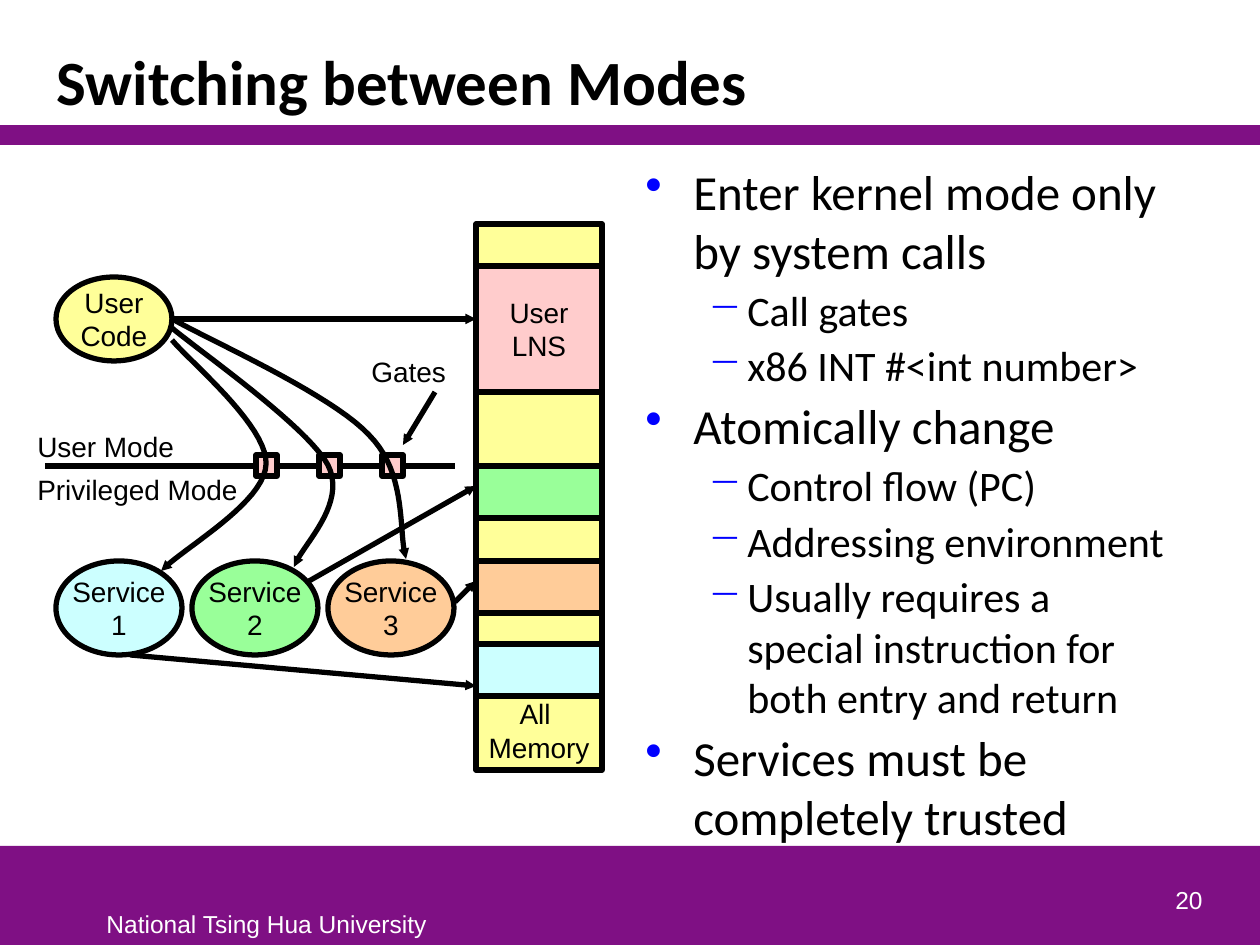
import pptx
import pptx.util
import pptx.dml.color
import pptx.enum.shapes
import pptx.enum.text
import pptx.oxml
import pptx.oxml.ns

PX = 914400 / 126
COLORS = {
    "purple": "7F1084", "white": "FFFFFF", "black": "000000", "bullet": "0000FF",
    "yellow": "FFFF99", "pink": "FFCCCC", "cyan": "CCFFFF", "green": "99FF99", "orange": "FFCC99",
}
RGB = {name: pptx.dml.color.RGBColor.from_string(code) for name, code in COLORS.items()}
KIND = pptx.enum.shapes.MSO_SHAPE
ANCHOR = pptx.enum.text.MSO_ANCHOR
ALIGN = pptx.enum.text.PP_ALIGN
STRAIGHT = pptx.enum.shapes.MSO_CONNECTOR.STRAIGHT


def write(frame, lines, size=16, font="Arial", color="black", bold=False,
          align=ALIGN.LEFT, anchor=ANCHOR.TOP, wrap=False):
    frame.word_wrap = wrap
    frame.vertical_anchor = anchor
    for index, line in enumerate(lines):
        paragraph = frame.paragraphs[0] if index == 0 else frame.add_paragraph()
        paragraph.alignment = align
        run = paragraph.add_run()
        run.text = line
        run.font.size = pptx.util.Pt(size)
        run.font.name = font
        run.font.bold = bold
        run.font.color.rgb = RGB[color]


def stroke(shape, arrow=False):
    shape.line.color.rgb = RGB["black"]
    shape.line.width = pptx.util.Pt(3)
    properties = shape._element.spPr
    if arrow:
        outline = properties.find(pptx.oxml.ns.qn("a:ln"))
        outline.append(pptx.oxml.parse_xml(
            f'<a:tailEnd {pptx.oxml.ns.nsdecls("a")} type="triangle" w="sm" len="sm"/>'))
    properties.append(pptx.oxml.parse_xml(f'<a:effectLst {pptx.oxml.ns.nsdecls("a")}/>'))


deck = pptx.Presentation()
deck.slide_width = round(1260 * PX)
deck.slide_height = round(945 * PX)
slide = deck.slides.add_slide(deck.slide_layouts[5])
shapes = slide.shapes

for top, height in [(846, 99), (125, 20)]:
    band = shapes.add_shape(KIND.RECTANGLE, 0, round(top * PX), deck.slide_width, round(height * PX))
    band.shadow.inherit = False
    band.fill.solid()
    band.fill.fore_color.rgb = RGB["purple"]
    band.line.fill.background()

title = shapes.title
title.left, title.top, title.width, title.height = [round(v * PX) for v in (44, 31, 1171, 94)]
write(title.text_frame, ["Switching between Modes"], size=36, font="Calibri", bold=True,
      anchor=ANCHOR.BOTTOM, wrap=True)
title.text_frame.paragraphs[0].line_spacing = 0.85

points = [
    (0, "Enter kernel mode only by system calls"),
    (1, "Call gates"),
    (1, "x86 INT #<int number>"),
    (0, "Atomically change"),
    (1, "Control flow (PC)"),
    (1, "Addressing environment"),
    (1, "Usually requires a special instruction for both entry and return"),
    (0, "Services must be completely trusted"),
]
levels = [(28, "•", 48, 48), (24, "−", 102, 39)]
body = shapes.add_textbox(*[round(v * PX) for v in (633, 155, 553, 684)]).text_frame
write(body, [text for level, text in points], font="Calibri", wrap=True)
for index, (paragraph, (level, text)) in enumerate(zip(body.paragraphs, points)):
    size, mark, margin, hanging = levels[level]
    paragraph.level = level
    settings = paragraph._p.get_or_add_pPr()
    settings.set("marL", str(round(margin * PX)))
    settings.set("indent", str(round(-hanging * PX)))
    for bullet in (f'<a:buClr {{}}><a:srgbClr val="{COLORS["bullet"]}"/></a:buClr>',
                   f'<a:buChar {{}} char="{mark}"/>'):
        settings.append(pptx.oxml.parse_xml(bullet.format(pptx.oxml.ns.nsdecls("a"))))
    if index:
        paragraph.space_before = pptx.util.Pt(3)
    paragraph.runs[0].font.size = pptx.util.Pt(size)

mode_boundary = shapes.add_connector(STRAIGHT, *[round(v * PX) for v in (45, 466, 455, 466)])
stroke(mode_boundary)

memory_blocks = [
    (224, 546, "yellow", ["All ", "Memory"], ANCHOR.BOTTOM),
    (266, 126, "pink", ["User", "LNS"], ANCHOR.MIDDLE),
    (466, 52, "green", [], ANCHOR.MIDDLE),
    (561, 52, "orange", [], ANCHOR.MIDDLE),
    (644, 52, "cyan", [], ANCHOR.MIDDLE),
]
parts = [(KIND.RECTANGLE, 476, top, 126, height, color, lines, anchor)
         for top, height, color, lines, anchor in memory_blocks]
parts += [(KIND.RECTANGLE, 256 + 63 * gate, 455, 21, 21, "pink", [], ANCHOR.MIDDLE)
          for gate in range(3)]
parts.append((KIND.OVAL, 56, 277, 116, 84, "yellow", ["User", "Code"], ANCHOR.MIDDLE))
parts += [(KIND.OVAL, 56 + 136 * number, 561, 126, 94, color, ["Service", str(number + 1)], ANCHOR.MIDDLE)
          for number, color in enumerate(["cyan", "green", "orange"])]
for kind, left, top, width, height, color, lines, anchor in parts:
    part = shapes.add_shape(kind, *[round(v * PX) for v in (left, top, width, height)])
    part.fill.solid()
    part.fill.fore_color.rgb = RGB[color]
    stroke(part)
    if lines:
        write(part.text_frame, lines, align=ALIGN.CENTER, anchor=anchor)

arrows = [
    (172, 319, 476, 319),
    (435, 392, 403, 445),
    (455, 602, 476, 581),
    (309, 581, 476, 486),
    (130, 655, 476, 686),
]
for ends in arrows:
    arrow = shapes.add_connector(STRAIGHT, *[round(v * PX) for v in ends])
    stroke(arrow, arrow=True)

gate_calls = [
    [(172, 340), (188, 360), (268, 426), (266, 464), (265, 503), (183, 548), (161, 571)],
    [(172, 328), (198, 350), (307, 426), (328, 465), (348, 505), (301, 546), (294, 567)],
    [(174, 320), (207, 339), (331, 394), (369, 435), (408, 474), (398, 533), (406, 559)],
]
STEPS = 20
for knots in gate_calls:
    route = []
    for start in (0, 3):
        a, b, c, d = knots[start:start + 4]
        for step in range(1, STEPS + 1):
            t = step / STEPS
            u = 1 - t
            route.append([(u**3 * a[i] + 3 * u * u * t * b[i] + 3 * u * t * t * c[i] + t**3 * d[i]) * PX
                          for i in (0, 1)])
    builder = shapes.build_freeform(round(knots[0][0] * PX), round(knots[0][1] * PX))
    builder.add_line_segments([(round(x), round(y)) for x, y in route], close=False)
    call = builder.convert_to_shape()
    call.fill.background()
    stroke(call, arrow=True)

labels = [
    ((25, 423, 163, 47), "User Mode", {}),
    ((25, 466, 226, 47), "Privileged Mode", {}),
    ((359, 348, 101, 47), "Gates", {}),
    ((94, 903, 348, 42), "National Tsing Hua University", {"size": 14, "color": "white"}),
    ((953, 858, 262, 63), "20", {"size": 14, "color": "white", "align": ALIGN.RIGHT,
                                 "anchor": ANCHOR.BOTTOM, "wrap": True}),
]
for place, text, style in labels:
    label = shapes.add_textbox(*[round(v * PX) for v in place])
    write(label.text_frame, [text], **style)

deck.save("out.pptx")
